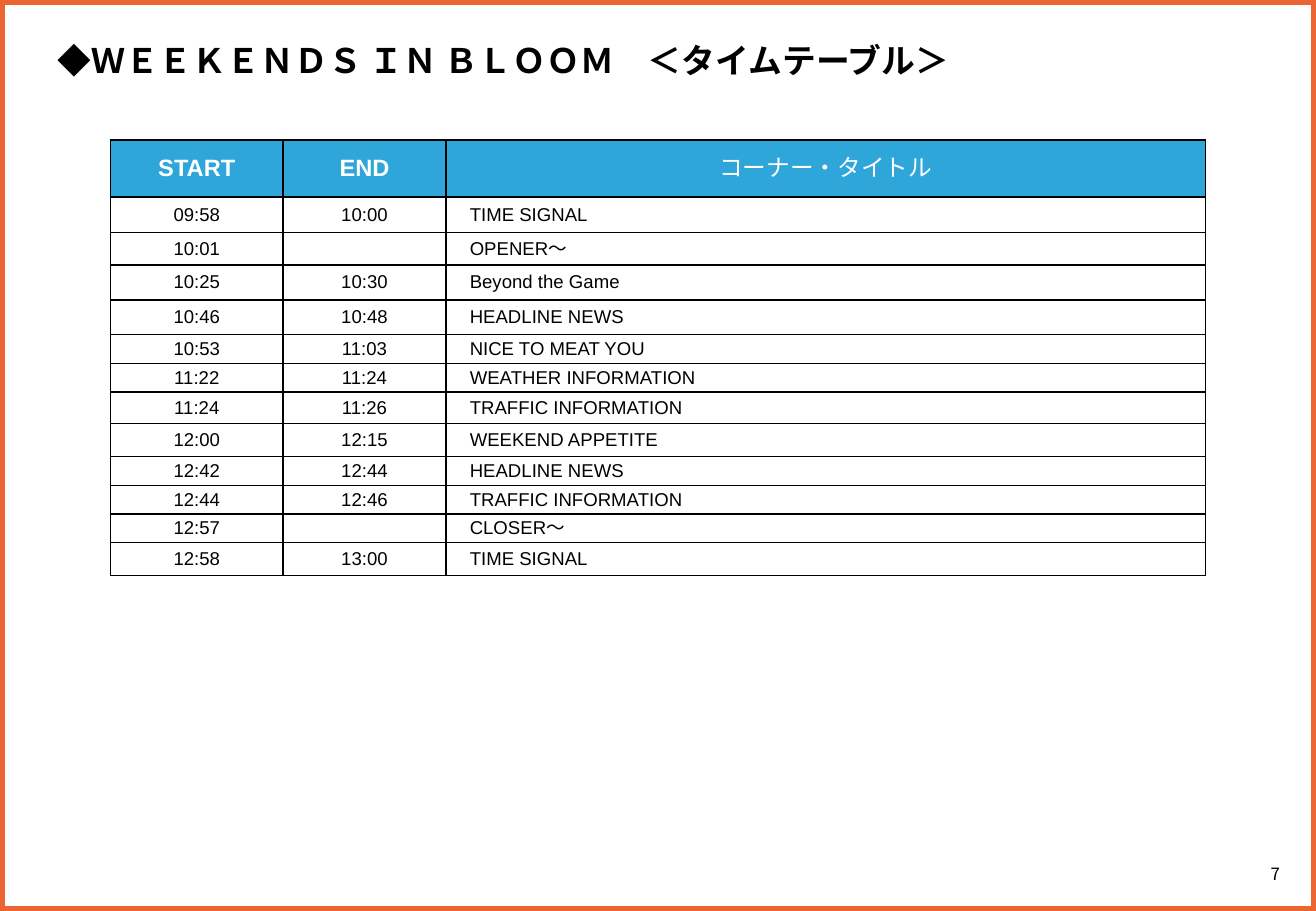
"""Build the radio programme timetable slide."""
from lxml import etree
from pptx import Presentation
from pptx.dml.color import RGBColor
from pptx.enum.shapes import MSO_SHAPE
from pptx.enum.text import MSO_ANCHOR, MSO_AUTO_SIZE, PP_ALIGN
from pptx.oxml.ns import qn
from pptx.util import Cm, Pt

LEFT, CENTER = PP_ALIGN.LEFT, PP_ALIGN.CENTER
TOP, MIDDLE = MSO_ANCHOR.TOP, MSO_ANCHOR.MIDDLE
FIXED = MSO_AUTO_SIZE.NONE
RECTANGLE = MSO_SHAPE.RECTANGLE
TITLE_ONLY = 5

LATIN, JAPANESE = "Arial", "Noto Sans CJK JP"
BLACK, WHITE, BLUE, ORANGE = "000000", "FFFFFF", "2EA6D9", "EB6432"
WIDTH, HEIGHT = 27.51, 19.05

MARK = "◆"
PROGRAMME = "ＷＥＥＫＥＮＤＳ ＩＮ ＢＬＯＯＭ　＜タイムテーブル＞"
PAGE = "7"
HEADINGS = ("START", "END", "コーナー・タイトル")
CORNERS = [
    ("09:58", "10:00", "TIME SIGNAL"),
    ("10:01", "", "OPENER〜"),
    ("10:25", "10:30", "Beyond the Game"),
    ("10:46", "10:48", "HEADLINE NEWS"),
    ("10:53", "11:03", "NICE TO MEAT YOU"),
    ("11:22", "11:24", "WEATHER INFORMATION"),
    ("11:24", "11:26", "TRAFFIC INFORMATION"),
    ("12:00", "12:15", "WEEKEND APPETITE"),
    ("12:42", "12:44", "HEADLINE NEWS"),
    ("12:44", "12:46", "TRAFFIC INFORMATION"),
    ("12:57", "", "CLOSER〜"),
    ("12:58", "13:00", "TIME SIGNAL"),
]
COLUMN_WIDTHS = (3.61, 3.4, 15.88)
ROW_HEIGHTS = (1.19, 0.74, 0.68, 0.73, 0.73, 0.6, 0.6, 0.66, 0.69, 0.6, 0.6, 0.6, 0.68)
TITLE_INDENT = 0.5


def color(value):
    return RGBColor.from_string(value)


def style(paragraph, name, size, ink, align):
    paragraph.alignment = align
    font = paragraph.font
    font.name, font.size = name, Pt(size)
    font.color.rgb = color(ink)
    defaults = paragraph._p.pPr.find(qn("a:defRPr"))
    etree.SubElement(defaults, qn("a:ea"), typeface=name)


def add_borders(cell):
    properties = cell._tc.get_or_add_tcPr()
    for side in ("a:lnL", "a:lnR", "a:lnT", "a:lnB"):
        line = etree.SubElement(properties, qn(side), w=str(Pt(1)))
        fill = etree.SubElement(line, qn("a:solidFill"))
        etree.SubElement(fill, qn("a:srgbClr"), val=BLACK)


def fill_cell(cell, text, is_heading, is_corner):
    add_borders(cell)
    cell.margin_left = Cm(TITLE_INDENT if is_corner and not is_heading else 0)
    cell.margin_right = cell.margin_top = cell.margin_bottom = 0
    cell.vertical_anchor = MIDDLE
    cell.text = text
    paragraph = cell.text_frame.paragraphs[0]
    if is_heading:
        cell.fill.solid()
        cell.fill.fore_color.rgb = color(BLUE)
        style(paragraph, LATIN, 14, WHITE, CENTER)
        paragraph.font.bold = not is_corner
    else:
        cell.fill.background()
        style(paragraph, LATIN, 11, BLACK, LEFT if is_corner else CENTER)
    if not text:
        paragraph._p.get_or_add_endParaRPr().set("sz", "1100")


def add_frame(slide):
    frame = slide.shapes.add_shape(RECTANGLE, 0, 0, Cm(WIDTH), Cm(HEIGHT))
    frame.shadow.inherit = False
    frame.fill.background()
    frame.line.color.rgb = color(ORANGE)
    frame.line.width = Pt(6)


def add_page_number(slide):
    number = slide.shapes.add_textbox(Cm(25.81), Cm(17.83), Cm(1.7), Cm(0.89)).text_frame
    number.word_wrap = True
    number.vertical_anchor = MIDDLE
    number.text = PAGE
    style(number.paragraphs[0], JAPANESE, 10, BLACK, CENTER)


def set_title(slide):
    title = slide.shapes.title
    title.left, title.top, title.width, title.height = Cm(0.95), Cm(0.74), Cm(21), Cm(1.12)
    frame = title.text_frame
    frame.auto_size = FIXED
    frame.vertical_anchor = TOP
    frame.margin_top, frame.margin_bottom = Cm(0.1), 0
    paragraph = frame.paragraphs[0]
    style(paragraph, JAPANESE, 20, BLACK, LEFT)
    for text, bold in ((MARK, False), (PROGRAMME, True)):
        run = paragraph.add_run()
        run.text = text
        run.font.bold = bold


def add_timetable(slide):
    rows = [HEADINGS, *CORNERS]
    table = slide.shapes.add_table(
        len(rows), len(HEADINGS), Cm(2.31), Cm(2.93),
        Cm(sum(COLUMN_WIDTHS)), Cm(sum(ROW_HEIGHTS))).table
    table.first_row = table.horz_banding = False
    for column, width in zip(table.columns, COLUMN_WIDTHS):
        column.width = Cm(width)
    for row, height in zip(table.rows, ROW_HEIGHTS):
        row.height = Cm(height)
    for r, texts in enumerate(rows):
        for c, text in enumerate(texts):
            fill_cell(table.cell(r, c), text, r == 0, c == 2)


def main():
    deck = Presentation()
    deck.slide_width, deck.slide_height = Cm(WIDTH), Cm(HEIGHT)
    slide = deck.slides.add_slide(deck.slide_layouts[TITLE_ONLY])
    add_frame(slide)
    add_page_number(slide)
    set_title(slide)
    add_timetable(slide)
    deck.save("out.pptx")


if __name__ == "__main__":
    main()
